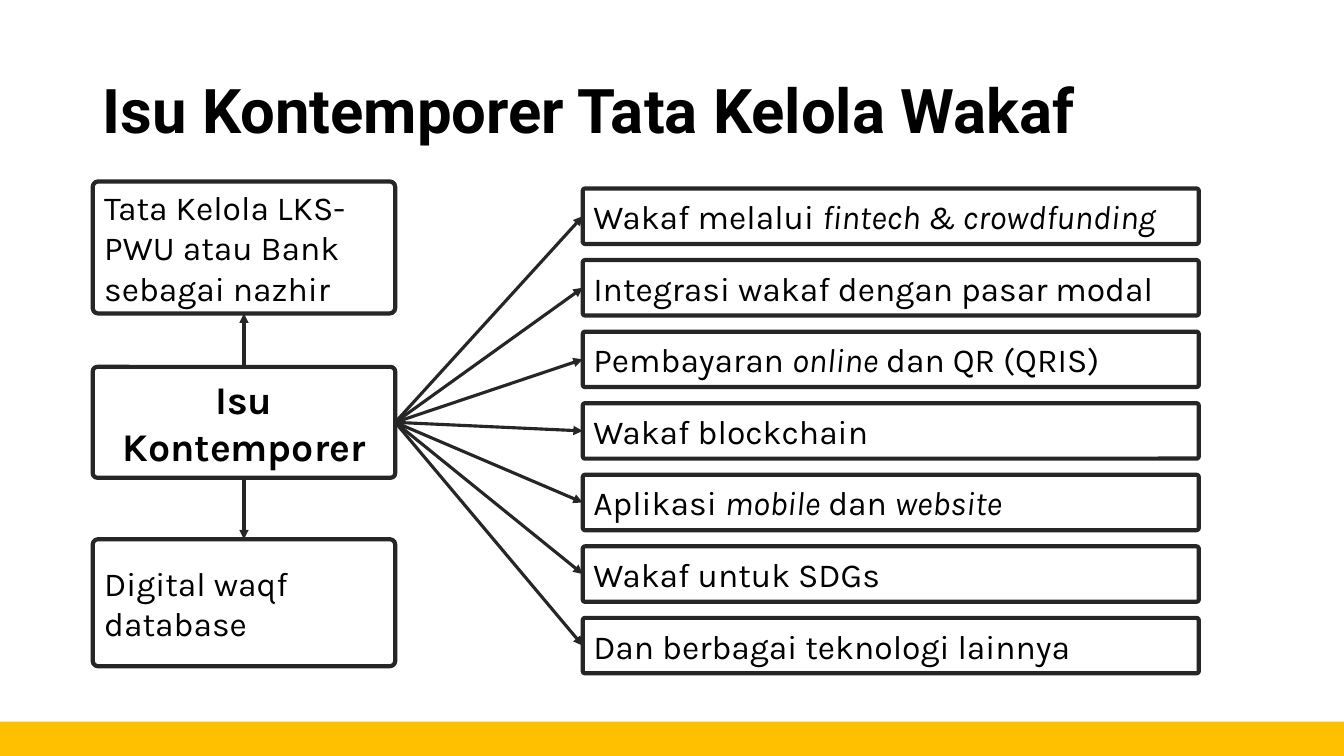
"""Build a slide mapping contemporary issues in waqf governance."""
from lxml import etree
from pptx import Presentation
from pptx.dml.color import RGBColor
from pptx.enum.shapes import MSO_CONNECTOR, MSO_SHAPE
from pptx.enum.text import MSO_ANCHOR, PP_ALIGN
from pptx.oxml.ns import qn
from pptx.util import Inches, Pt

BLACK = RGBColor(0x00, 0x00, 0x00)
WHITE = RGBColor(0xFF, 0xFF, 0xFF)
CHARCOAL = RGBColor(0x26, 0x26, 0x26)
AMBER = RGBColor(0xFF, 0xC0, 0x00)
ROUNDED = MSO_SHAPE.ROUNDED_RECTANGLE
RECTANGLE = MSO_SHAPE.RECTANGLE
STRAIGHT = MSO_CONNECTOR.STRAIGHT
MIDDLE = MSO_ANCHOR.MIDDLE
LEFT, CENTER = PP_ALIGN.LEFT, PP_ALIGN.CENTER
TOP_SIDE, LEFT_SIDE, BOTTOM_SIDE, RIGHT_SIDE = range(4)

ISSUES_LEFT, ISSUES_TOP, ISSUES_PITCH = 5.78, 1.87, 0.71
ISSUES = [
    "Wakaf melalui *fintech & crowdfunding*",
    "Integrasi wakaf dengan pasar modal",
    "Pembayaran *online* dan QR (QRIS)",
    "Wakaf blockchain",
    "Aplikasi *mobile* dan *website*",
    "Wakaf untuk SDGs",
    "Dan berbagai teknologi lainnya",
]


def add_box(text, left, top, width, height, size=24, bold=False, align=LEFT):
    """Add an outlined box; words between asterisks are italic."""
    box = slide.shapes.add_shape(
        ROUNDED, Inches(left), Inches(top), Inches(width), Inches(height))
    box.adjustments[0] = 0.041
    box.shadow.inherit = False
    box.fill.solid()
    box.fill.fore_color.rgb = WHITE
    box.line.color.rgb = CHARCOAL
    box.line.width = Pt(3)
    frame = box.text_frame
    frame.word_wrap = True
    frame.vertical_anchor = MIDDLE
    para = frame.paragraphs[0]
    para.alignment = align
    para.font.name = "Karla"
    para.font.size = Pt(size)
    para.font.bold = bold
    para.font.color.rgb = BLACK
    for index, part in enumerate(text.split("*")):
        if part:
            span = para.add_run()
            span.text = part
            if index % 2:
                span.font.italic = True
    return box


def add_arrow(start, start_side, end, end_side):
    """Join two boxes with an arrow pointing at the second."""
    arrow = slide.shapes.add_connector(STRAIGHT, 0, 0, 0, 0)
    arrow.begin_connect(start, start_side)
    arrow.end_connect(end, end_side)
    arrow.line.color.rgb = CHARCOAL
    arrow.line.width = Pt(2.25)
    properties = arrow.line._get_or_add_ln()
    etree.SubElement(properties, qn("a:tailEnd"), type="triangle")
    etree.SubElement(properties.getparent(), qn("a:effectLst"))


deck = Presentation()
deck.slide_width = Inches(13.33)
deck.slide_height = Inches(7.5)
slide = deck.slides.add_slide(deck.slide_layouts[5])

footer_bar = slide.shapes.add_shape(
    RECTANGLE, 0, Inches(7.16), deck.slide_width, Inches(0.34))
footer_bar.shadow.inherit = False
footer_bar.fill.solid()
footer_bar.fill.fore_color.rgb = AMBER
footer_bar.line.fill.background()

title = slide.shapes.title
title.left, title.top = Inches(0.92), Inches(0.4)
title.width, title.height = Inches(11.5), Inches(1.45)
title.text_frame.text = "Isu Kontemporer Tata Kelola Wakaf"
title.text_frame.vertical_anchor = MIDDLE
heading = title.text_frame.paragraphs[0]
heading.alignment = LEFT
heading.line_spacing = 0.9
heading.font.name = "Roboto"
heading.font.size = Pt(44)
heading.font.bold = True
heading.font.color.rgb = BLACK

hub = add_box("Isu Kontemporer", 0.92, 3.64, 3, 1.1, 28, True, CENTER)
governance = add_box(
    "Tata Kelola LKS-PWU atau Bank sebagai nazhir", 0.92, 1.8, 3, 1.31)
database = add_box("Digital waqf database", 0.92, 5.35, 3, 1.26)
add_arrow(hub, TOP_SIDE, governance, BOTTOM_SIDE)
add_arrow(hub, BOTTOM_SIDE, database, TOP_SIDE)

for row, issue in enumerate(ISSUES):
    issue_box = add_box(
        issue, ISSUES_LEFT, ISSUES_TOP + row * ISSUES_PITCH, 6.11, 0.55)
    add_arrow(hub, RIGHT_SIDE, issue_box, LEFT_SIDE)

deck.save("out.pptx")
